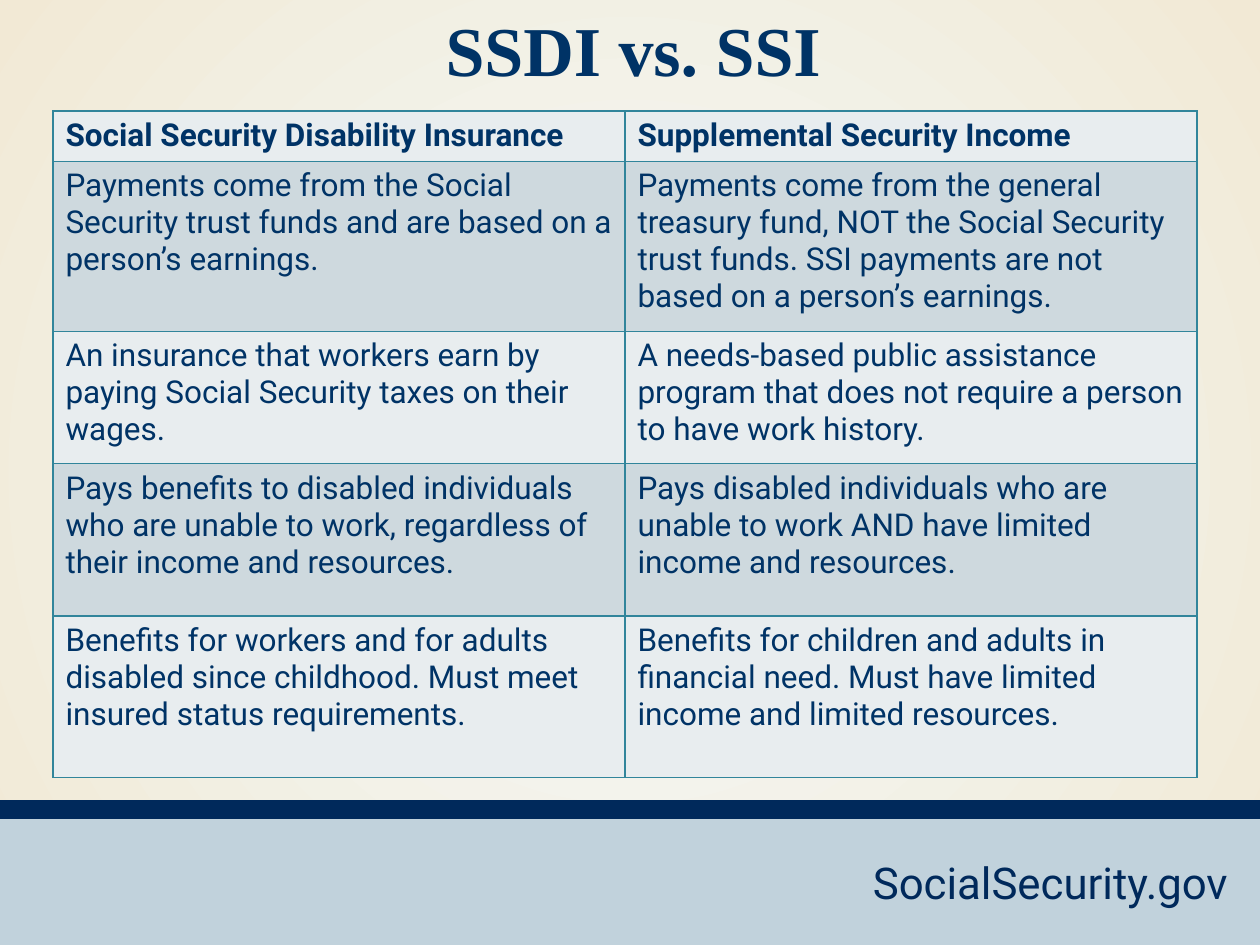
from lxml import etree
from pptx import Presentation
from pptx.dml.color import RGBColor
from pptx.enum.shapes import MSO_SHAPE
from pptx.enum.text import MSO_ANCHOR, MSO_AUTO_SIZE, PP_ALIGN
from pptx.oxml import parse_xml
from pptx.oxml.ns import nsdecls, qn
from pptx.util import Inches, Pt

RECT = MSO_SHAPE.RECTANGLE
TOP = MSO_ANCHOR.TOP
GROW = MSO_AUTO_SIZE.SHAPE_TO_FIT_TEXT
LEFT, CENTER = PP_ALIGN.LEFT, PP_ALIGN.CENTER

INK = RGBColor(0x00, 0x33, 0x66)
NAVY = RGBColor(0x00, 0x29, 0x5B)
MIST = RGBColor(0xC1, 0xD2, 0xDC)
PALE = RGBColor(0xE8, 0xED, 0xEF)
BAND = RGBColor(0xCE, 0xD9, 0xDE)
TEAL = RGBColor(0x31, 0x85, 0x9B)
ICE = RGBColor(0xF3, 0xFA, 0xFB)
SAND = RGBColor(0xF2, 0xE9, 0xD5)

ROWS = [
    ("Social Security Disability Insurance", "Supplemental Security Income"),
    ("Payments come from the Social Security trust funds and are based on a person’s earnings.",
     "Payments come from the general treasury fund, NOT the Social Security trust funds. "
     "SSI payments are not based on a person’s earnings."),
    ("An insurance that workers earn by paying Social Security taxes on their wages.",
     "A needs-based public assistance program that does not require a person to have work history."),
    ("Pays benefits to disabled individuals who are unable to work, "
     "regardless of their income and resources.",
     "Pays disabled individuals who are unable to work AND have limited income and resources."),
    ("Benefits for workers and for adults disabled since childhood. "
     "Must meet insured status requirements.",
     "Benefits for children and adults in financial need. "
     "Must have limited income and limited resources."),
]
HEIGHTS = [0.4, 1.35, 1.05, 1.21, 1.28]
WIDTHS = [4.54, 4.54]


def write(frame, text, size=18, face="Roboto", color=INK, bold=False, align=LEFT):
    para = frame.paragraphs[0]
    para.alignment = align
    run = para.add_run()
    run.text = text
    font = run.font
    font.size, font.name, font.bold = Pt(size), face, bold
    font.color.rgb = color


class Deck:
    def __init__(self, show, slide):
        self.show = show
        self.slide = slide

    def back(self, inner, outer):
        fill = self.slide.background.fill
        fill.gradient()
        for stop, color, place in zip(fill.gradient_stops, (inner, outer), (0, 1)):
            stop.color.rgb = color
            stop.position = place
        grad = self.slide.background._cSld.find(".//" + qn("a:gradFill"))
        grad.remove(grad.find(qn("a:lin")))
        ring = etree.SubElement(grad, qn("a:path"), path="circle")
        etree.SubElement(ring, qn("a:fillToRect"), l="50000", t="50000", r="50000", b="50000")

    def bar(self, top, height, color):
        shape = self.slide.shapes.add_shape(
            RECT, 0, Inches(top), self.show.slide_width, Inches(height))
        shape.shadow.inherit = False
        shape.fill.solid()
        shape.fill.fore_color.rgb = color
        shape.line.fill.background()

    def label(self, text, box, **style):
        shape = self.slide.shapes.add_textbox(*map(Inches, box))
        shape.text_frame.word_wrap = True
        shape.text_frame.auto_size = GROW
        write(shape.text_frame, text, **style)

    def title(self, text, box, **style):
        shape = self.slide.shapes.title
        shape.left, shape.top, shape.width, shape.height = map(Inches, box)
        frame = shape.text_frame
        frame.word_wrap = False
        frame.auto_size = GROW
        frame.vertical_anchor = TOP
        write(frame, text, **style)

    def cell(self, cell, text, fill, bold):
        props = cell._tc.get_or_add_tcPr()
        for side in "LRTB":
            props.append(parse_xml(
                f'<a:ln{side} {nsdecls("a")} w="{Pt(1)}"><a:solidFill>'
                f'<a:srgbClr val="{TEAL}"/></a:solidFill></a:ln{side}>'))
        cell.fill.solid()
        cell.fill.fore_color.rgb = fill
        write(cell.text_frame, text, bold=bold)

    def table(self, left, top):
        table = self.slide.shapes.add_table(
            len(ROWS), len(WIDTHS), Inches(left), Inches(top),
            Inches(sum(WIDTHS)), Inches(sum(HEIGHTS))).table
        for col, width in zip(table.columns, WIDTHS):
            col.width = Inches(width)
        for r, (texts, height) in enumerate(zip(ROWS, HEIGHTS)):
            table.rows[r].height = Inches(height)
            for c, text in enumerate(texts):
                self.cell(table.cell(r, c), text, BAND if r % 2 else PALE, r == 0)


def main():
    show = Presentation()
    show.slide_width, show.slide_height = Inches(10), Inches(7.5)
    deck = Deck(show, show.slides.add_slide(show.slide_layouts[5]))
    deck.back(ICE, SAND)
    deck.bar(6.45, 1.05, MIST)
    deck.bar(6.35, 0.15, NAVY)
    deck.label("SocialSecurity.gov", (6.83, 6.74, 3.07, 0.52), size=25, color=NAVY)
    deck.table(0.42, 0.88)
    deck.title("SSDI vs. SSI", (3.42, 0, 3.21, 0.77), size=40,
               face="Times New Roman", bold=True, align=CENTER)
    show.save("out.pptx")


if __name__ == "__main__":
    main()
